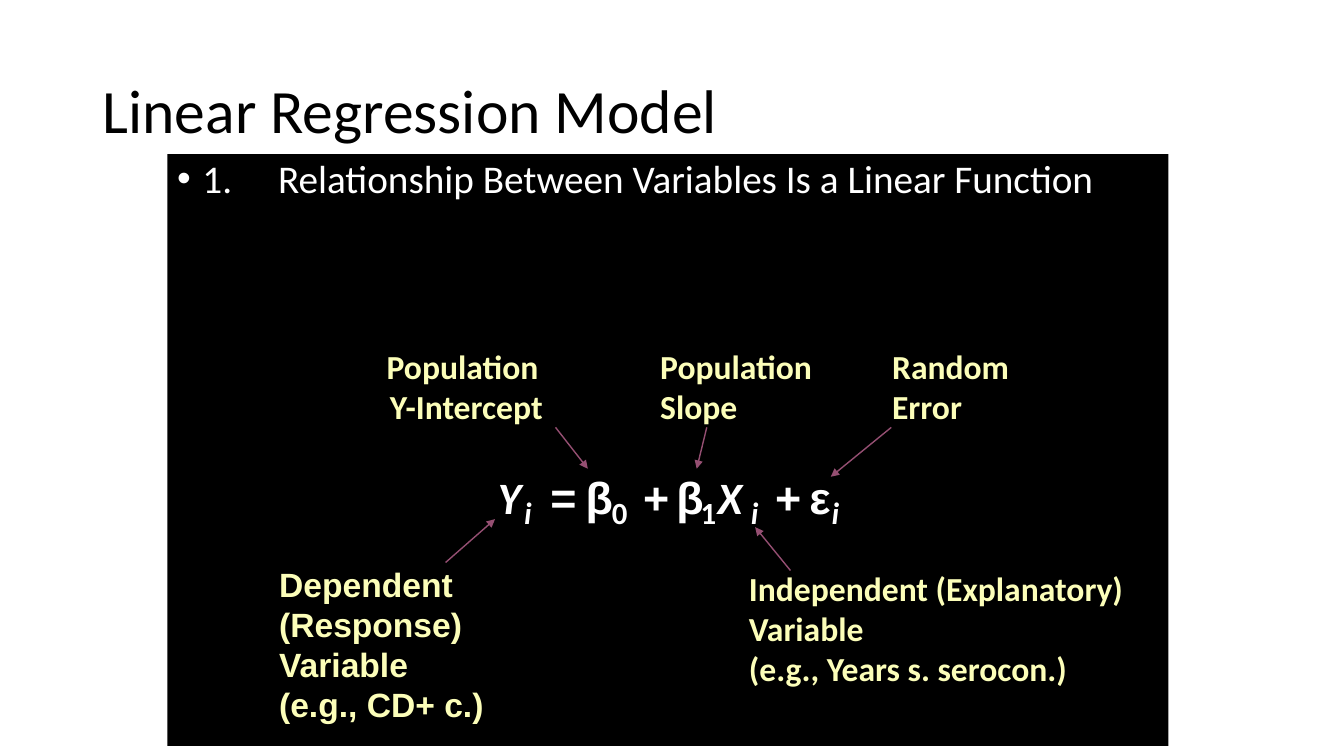
"""Build the Linear Regression Model slide."""
from dataclasses import dataclass

from lxml.etree import SubElement
from pptx import Presentation
from pptx.dml.color import RGBColor
from pptx.enum.shapes import MSO_CONNECTOR, MSO_SHAPE
from pptx.enum.text import MSO_ANCHOR, MSO_AUTO_SIZE, PP_ALIGN
from pptx.oxml.ns import qn
from pptx.util import Inches, Pt


@dataclass(frozen=True)
class Theme:
    black: str = "000000"
    white: str = "FFFFFF"
    label: str = "FCFEB9"
    arrow: str = "954F72"
    body_font: str = "Calibri"
    symbol_font: str = "Arial"
    title_size: int = 44
    symbol_size: int = 32
    statement_size: int = 28
    label_size: int = 24
    subscript_size: int = 22


THEME = Theme()
TITLE = "Linear Regression Model"
STATEMENT = "1.\tRelationship Between Variables Is a Linear Function"

VARIABLES = [("Y", 4.84, 0.43), ("X", 7.02, 0.45)]
SYMBOLS = [("=", 5.36, 0.45), ("β", 5.71, 0.45), ("+", 6.28, 0.45),
           ("β", 6.61, 0.45), ("+", 7.59, 0.45), ("ε", 7.93, 0.4)]
INDEXES = [("i", 5.1, 0.28), ("i", 7.35, 0.28), ("i", 8.15, 0.28)]
NUMBERS = [("0", 5.97, 0.36), ("1", 6.85, 0.36)]
SYMBOL_ROW = (4.61, 0.64)
SUBSCRIPT_ROW = (4.85, 0.47)

EQUATION = [
    (VARIABLES, SYMBOL_ROW, THEME.body_font, THEME.symbol_size, True),
    (SYMBOLS, SYMBOL_ROW, THEME.symbol_font, THEME.symbol_size, False),
    (INDEXES, SUBSCRIPT_ROW, THEME.body_font, THEME.subscript_size, True),
    (NUMBERS, SUBSCRIPT_ROW, THEME.body_font, THEME.subscript_size, False),
]

LABELS = [
    ("Dependent (Response) Variable\v(e.g., CD+ c.)", (2.67, 5.54, 2.41, 1.71),
     THEME.symbol_font, PP_ALIGN.LEFT),
    ("Independent (Explanatory) Variable \v(e.g., Years s. serocon.)",
     (7.33, 5.58, 4.08, 1.31), THEME.body_font, PP_ALIGN.LEFT),
    ("Population \vY-Intercept", (3.42, 3.38, 2.41, 0.91),
     THEME.body_font, PP_ALIGN.CENTER),
    ("Population Slope", (6.45, 3.38, 1.97, 0.91), THEME.body_font, PP_ALIGN.LEFT),
    ("Random Error", (8.75, 3.38, 1.74, 0.91), THEME.body_font, PP_ALIGN.LEFT),
]

ARROWS = [
    ((4.42, 5.58), (4.91, 5.15)),
    ((7.84, 5.66), (7.49, 5.23)),
    ((5.51, 4.24), (5.83, 4.65)),
    ((7.01, 4.24), (6.91, 4.65)),
    ((8.84, 4.24), (8.24, 4.73)),
]


def write(box, text, size, color, font=THEME.body_font, bold=False, italic=False,
          align=PP_ALIGN.LEFT):
    para = box.text_frame.paragraphs[0]
    para.text = text
    para.alignment = align
    para.font.name = font
    para.font.size = Pt(size)
    para.font.bold = bold
    para.font.italic = italic
    para.font.color.rgb = RGBColor.from_string(color)
    return para


def add_text(page, place, text, size, color, wrap=True, **style):
    box = page.shapes.add_textbox(*map(Inches, place))
    box.text_frame.word_wrap = wrap
    box.text_frame.auto_size = MSO_AUTO_SIZE.SHAPE_TO_FIT_TEXT
    write(box, text, size, color, **style)
    return box


def add_panel(page):
    panel = page.shapes.add_shape(
        MSO_SHAPE.RECTANGLE, *map(Inches, (1.66, 1.53, 9.93, 5.87)))
    panel.shadow.inherit = False
    panel.fill.solid()
    panel.fill.fore_color.rgb = RGBColor.from_string(THEME.black)
    panel.line.fill.background()
    panel.text_frame.word_wrap = True
    panel.text_frame.vertical_anchor = MSO_ANCHOR.TOP
    para = write(panel, STATEMENT, THEME.statement_size, THEME.white)
    para.line_spacing = 0.9
    para.space_before = Pt(10)
    properties = para._p.get_or_add_pPr()
    properties.set("marL", str(Inches(0.25)))
    properties.set("indent", str(Inches(-0.25)))
    bullet_font = properties.makeelement(qn("a:buFont"), {"typeface": "Arial"})
    bullet = properties.makeelement(qn("a:buChar"), {"char": "•"})
    defaults = properties.find(qn("a:defRPr"))
    defaults.addprevious(bullet_font)
    defaults.addprevious(bullet)


def add_title(page):
    title = add_text(page, (0.92, 0.4, 11.5, 1.45), TITLE, THEME.title_size, THEME.black)
    title.text_frame.auto_size = MSO_AUTO_SIZE.NONE
    title.text_frame.vertical_anchor = MSO_ANCHOR.MIDDLE
    title.text_frame.paragraphs[0].line_spacing = 0.9


def add_arrow(page, start, end):
    arrow = page.shapes.add_connector(
        MSO_CONNECTOR.STRAIGHT, *map(Inches, start + end))
    arrow.line.color.rgb = RGBColor.from_string(THEME.arrow)
    arrow.line.width = Pt(1)
    SubElement(arrow.line._get_or_add_ln(), qn("a:tailEnd"), type="triangle")
    SubElement(arrow._element.spPr, qn("a:effectLst"))


def main():
    deck = Presentation()
    deck.slide_width, deck.slide_height = Inches(13.33), Inches(7.5)
    page = deck.slides.add_slide(deck.slide_layouts[6])
    add_panel(page)
    for terms, (top, height), font, size, italic in EQUATION:
        for text, left, width in terms:
            add_text(page, (left, top, width, height), text, size, THEME.white,
                     wrap=False, font=font, bold=True, italic=italic)
    add_title(page)
    for text, place, font, align in LABELS:
        add_text(page, place, text, THEME.label_size, THEME.label,
                 font=font, bold=True, align=align)
    for start, end in ARROWS:
        add_arrow(page, start, end)
    deck.save("out.pptx")


if __name__ == "__main__":
    main()
